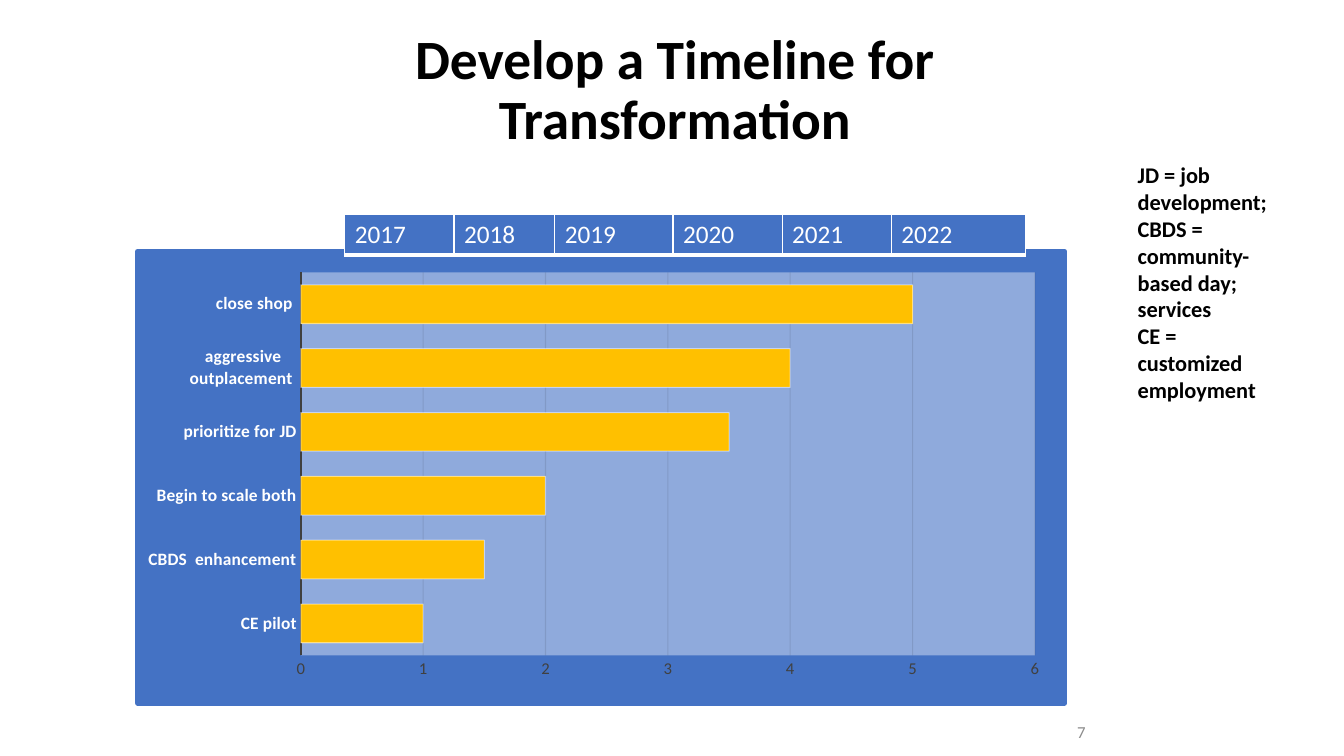
from lxml import etree
from pptx import Presentation
from pptx.chart.data import CategoryChartData
from pptx.dml.color import RGBColor
from pptx.enum.chart import XL_CHART_TYPE, XL_TICK_MARK
from pptx.enum.text import MSO_ANCHOR, PP_ALIGN
from pptx.oxml import parse_xml
from pptx.oxml.ns import nsdecls, qn
from pptx.util import Cm, Pt

BAR = XL_CHART_TYPE.BAR_CLUSTERED
NO_TICK = XL_TICK_MARK.NONE
MIDDLE = MSO_ANCHOR.MIDDLE
LEFT, CENTER, RIGHT = PP_ALIGN.LEFT, PP_ALIGN.CENTER, PP_ALIGN.RIGHT

FONT = "Calibri"
COLORS = {
    "text": "000000",
    "white": "FFFFFF",
    "panel": "4472C4",
    "plot": "8FAADC",
    "bar": "FFC000",
    "axis": "404040",
    "grid": "0D0D0D",
    "number": "8C8C8C",
}
MILESTONES = [
    ("CE pilot", 1),
    ("CBDS  enhancement", 1.5),
    ("Begin to scale both", 2),
    ("prioritize for JD", 3.5),
    ("aggressive outplacement ", 4),
    ("close shop ", 5),
]
YEAR_WIDTHS = [2.75, 2.54, 2.98, 2.75, 2.75, 3.38]
FIRST_YEAR = 2017
LEGEND = [
    "JD = job development;",
    "CBDS = community-based day; services",
    "CE = customized employment",
]


def rgb(name):
    """Return the named colour."""
    return RGBColor.from_string(COLORS[name])


def style_font(font, size, color, bold=False):
    """Set typeface, size, colour and weight."""
    font.name, font.size, font.bold = FONT, Pt(size), bold
    font.color.rgb = rgb(color)


def set_alpha(color_format_parent, percent):
    """Make every solid colour below the element partly transparent."""
    for clr in color_format_parent.iter(qn("a:srgbClr")):
        etree.SubElement(clr, qn("a:alpha")).set("val", str(percent * 1000))


def fill_solid(fill, color):
    """Fill with one named colour."""
    fill.solid()
    fill.fore_color.rgb = rgb(color)


def add_title(slide, x, y, w, h):
    """Place and format the title."""
    sp = slide.shapes.title
    sp.left, sp.top, sp.width, sp.height = Cm(x), Cm(y), Cm(w), Cm(h)
    tf = sp.text_frame
    tf.text = "Develop a Timeline for Transformation"
    tf.vertical_anchor, tf.word_wrap = MIDDLE, True
    p = tf.paragraphs[0]
    p.alignment, p.line_spacing = CENTER, 0.9
    style_font(p.font, 39.6, "text", True)


def add_text(slide, x, y, w, h, lines, size, color, bold=False, align=LEFT):
    """Add a wrapped text box with one paragraph per line."""
    tf = slide.shapes.add_textbox(Cm(x), Cm(y), Cm(w), Cm(h)).text_frame
    tf.word_wrap = True
    tf.text = "\n".join(lines)
    for p in tf.paragraphs:
        p.alignment = align
        style_font(p.font, size, color, bold)
    return tf


def set_plot_area(chart, x, y, w, h):
    """Fix the inner plot area as fractions of the chart and fill it."""
    area = chart._chartSpace.chart.plotArea
    for old in area.findall(qn("c:layout")):
        area.remove(old)
    places = "".join(f'<c:{k} val="{v}"/>' for k, v in zip("xywh", (x, y, w, h)))
    area.insert(0, parse_xml(
        f'<c:layout {nsdecls("c")}><c:manualLayout><c:layoutTarget val="inner"/>'
        f'<c:xMode val="edge"/><c:yMode val="edge"/>{places}'
        '</c:manualLayout></c:layout>'))
    area.append(parse_xml(
        f'<c:spPr {nsdecls("c", "a")}><a:solidFill><a:srgbClr val="{COLORS["plot"]}"/>'
        '</a:solidFill></c:spPr>'))


def set_panel(chart):
    """Give the chart its background and border."""
    panel = f'<a:solidFill><a:srgbClr val="{COLORS["panel"]}"/></a:solidFill>'
    chart._chartSpace.chart.addnext(parse_xml(
        f'<c:spPr {nsdecls("c", "a")}>{panel}<a:ln w="{Pt(4)}">{panel}'
        '<a:round/></a:ln></c:spPr>'))


def add_chart(slide, x, y, w, h):
    """Add the milestone bar chart."""
    data = CategoryChartData()
    names, years = zip(*MILESTONES)
    data.categories = names
    data.add_series("Series 1", years)
    chart = slide.shapes.add_chart(BAR, Cm(x), Cm(y), Cm(w), Cm(h), data).chart
    chart.has_legend = chart.has_title = False
    style_font(chart.font, 10, "text")
    set_panel(chart)
    set_plot_area(chart, 0.176, 0.046, 0.792, 0.849)

    plot = chart.plots[0]
    plot.gap_width, plot.vary_by_categories = 65, False
    bars = plot.series[0].format
    fill_solid(bars.fill, "bar")
    bars.line.width = Pt(0.75)
    bars.line.color.rgb = rgb("white")
    set_alpha(bars.line._get_or_add_ln(), 50)

    cat, val = chart.category_axis, chart.value_axis
    for axis in (cat, val):
        axis.major_tick_mark = axis.minor_tick_mark = NO_TICK
    style_font(cat.tick_labels.font, 12.5, "white", True)
    cat.format.line.width = Pt(1.5)
    cat.format.line.color.rgb = rgb("axis")

    style_font(val.tick_labels.font, 12, "axis")
    val.minimum_scale, val.maximum_scale, val.major_unit = 0, 6, 1
    val.format.line.fill.background()
    grid = val.major_gridlines.format.line
    grid.width = Pt(0.75)
    grid.color.rgb = rgb("grid")
    set_alpha(grid._get_or_add_ln(), 10)


def set_borders(cell):
    """Draw white cell borders, thicker at the bottom."""
    tc_pr = cell._tc.get_or_add_tcPr()
    for i, (side, width) in enumerate(zip("LRTB", (1, 1, 1, 3))):
        tc_pr.insert(i, parse_xml(
            f'<a:ln{side} {nsdecls("a")} w="{Pt(width)}"><a:solidFill>'
            f'<a:srgbClr val="{COLORS["white"]}"/></a:solidFill></a:ln{side}>'))


def add_years(slide, x, y, h):
    """Add the row of years above the chart."""
    table = slide.shapes.add_table(
        1, len(YEAR_WIDTHS), Cm(x), Cm(y), Cm(sum(YEAR_WIDTHS)), Cm(h)).table
    table.first_row = table.horz_banding = False
    for i, width in enumerate(YEAR_WIDTHS):
        table.columns[i].width = Cm(width)
        cell = table.cell(0, i)
        cell.text = str(FIRST_YEAR + i)
        style_font(cell.text_frame.paragraphs[0].font, 18, "white")
        fill_solid(cell.fill, "panel")
        set_borders(cell)


def main():
    """Build and save the timeline slide."""
    prs = Presentation()
    prs.slide_width, prs.slide_height = Cm(33.87), Cm(19.05)
    s = prs.slides.add_slide(prs.slide_layouts[5])
    add_title(s, 6.53, 0.79, 20.95, 3.02)
    number = add_text(s, 24.87, 17.93, 2.74, 1.02, ["7"], 12, "number", align=RIGHT)
    number.vertical_anchor = MIDDLE
    add_chart(s, 3.4, 6.27, 23.5, 11.51)
    add_years(s, 8.69, 5.41, 1.02)
    add_text(s, 28.42, 3.94, 3.81, 6.4, LEGEND, 16, "text", True)
    prs.save("out.pptx")


if __name__ == "__main__":
    main()
